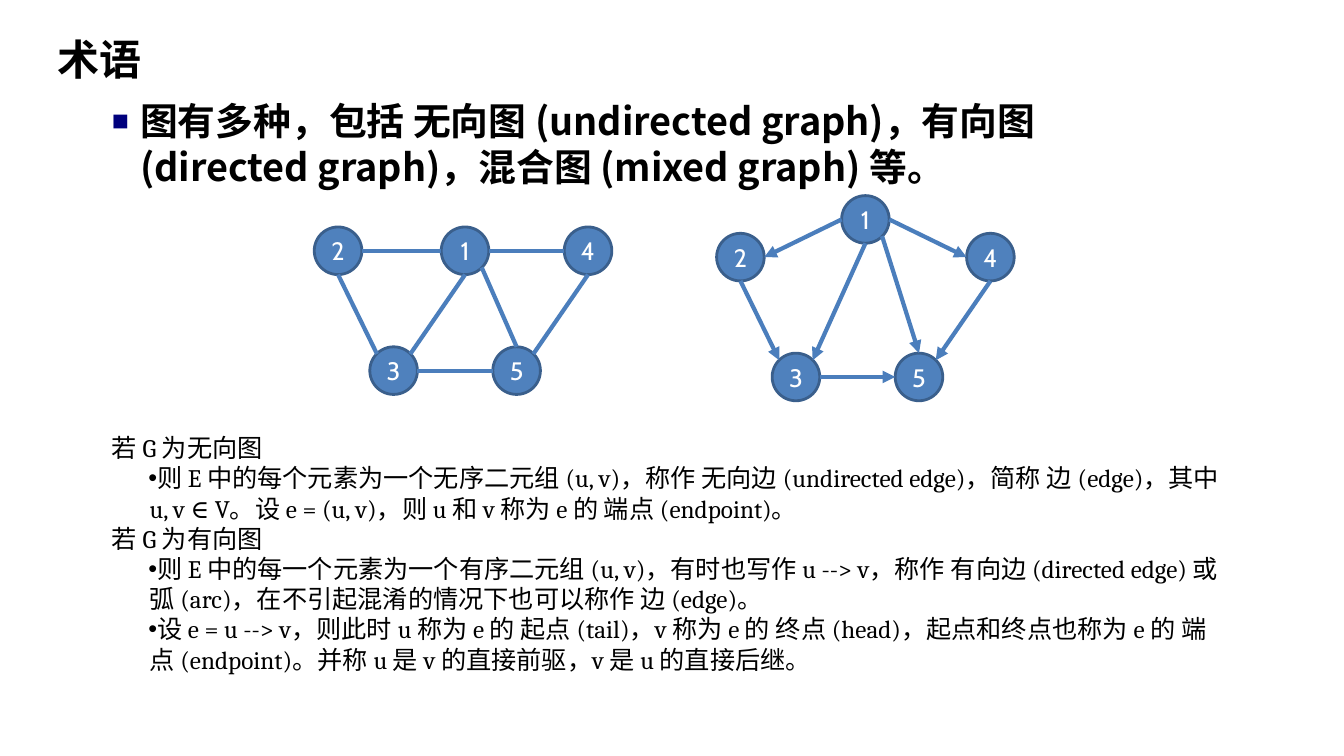
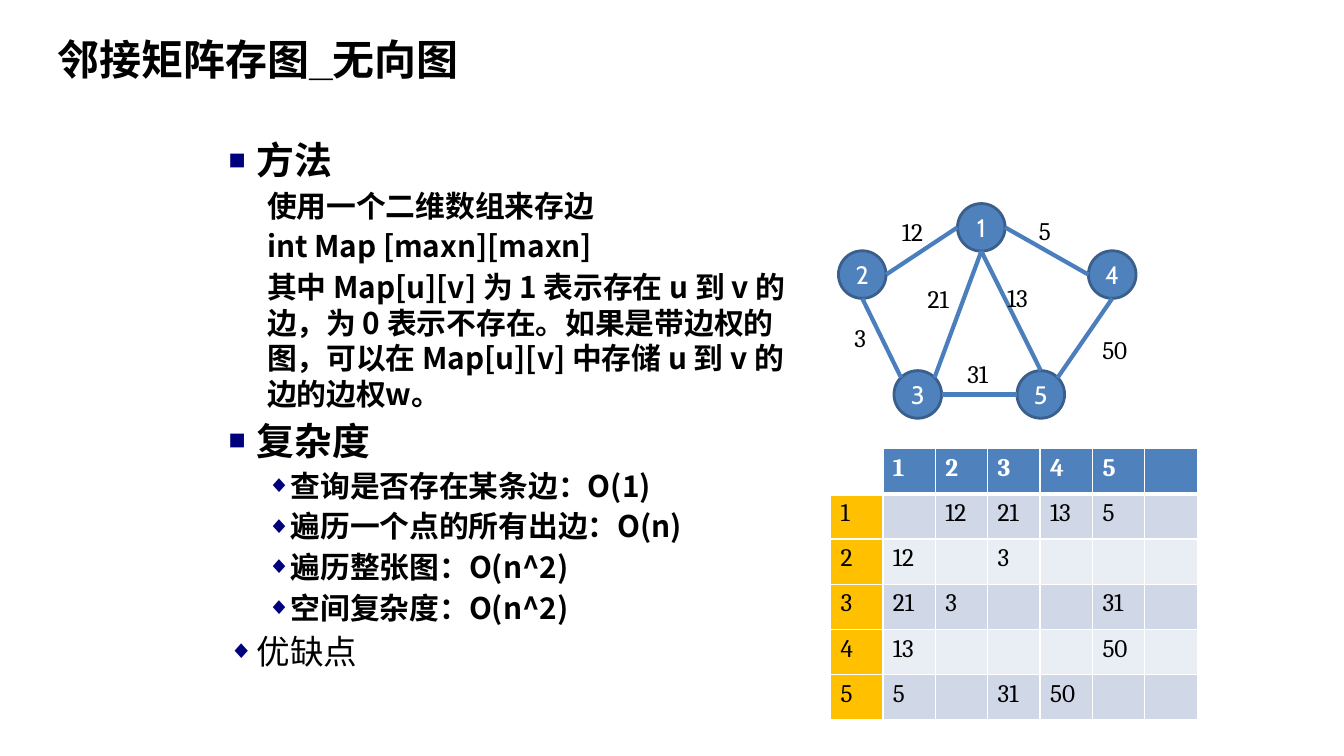
from lxml.etree import SubElement
from pptx import Presentation
from pptx.dml.color import RGBColor
from pptx.enum.shapes import MSO_CONNECTOR, MSO_SHAPE
from pptx.enum.text import MSO_ANCHOR, PP_ALIGN
from pptx.oxml.ns import qn
from pptx.util import Cm, Pt

COLORS = {
    "text": "000000", "white": "FFFFFF", "bullet": "00007D",
    "node": "4F81BD", "node_line": "3A5F8C", "edge": "4B7EBC",
    "row_head": "FFC000", "band_dark": "D0D8E8", "band_light": "E9EDF4",
}
TITLE_FONT, BODY_FONT = "Arial", "Noto Sans CJK SC"
NOTE_FONT, NODE_FONT = "Cambria", "Cabin"

TITLE_BOX = (1.2, 0.28, 31.5, 2.39)
NODE_SIZE = 1.2
# Points on a node's rim, as fractions of its size
RIM = {
    "top": (0.5, 0), "left": (0, 0.5), "bottom": (0.5, 1), "right": (1, 0.5),
    "upper_left": (0.15, 0.15), "upper_right": (0.85, 0.15),
    "lower_right": (0.85, 0.85),
}
# Body levels: left indent and first-line offset in cm
HEADING = dict(size=27, font=BODY_FONT, bold=True, left=0.71, first=-0.71,
               bullet="■", bullet_size=75, before=4)
DETAIL = dict(size=21.3, font=BODY_FONT, bold=True, left=0.97, before=3.5)
ITEM = DETAIL | dict(left=1.55, first=-0.58, bullet="◆", bullet_size=80)
PLAIN = HEADING | dict(size=24, bold=False, bullet="◆")
NOTE = dict(size=18, font=NOTE_FONT)
NOTE_ITEM = NOTE | dict(left=0.95, first=-0.03, bullet="•")


def rgb(name):
    return RGBColor.from_string(COLORS[name])


def add_bullet(properties, char, size):
    """Coloured, scaled bullet when a size is given, otherwise a plain one."""
    if size:
        color = SubElement(properties, qn("a:buClr"))
        SubElement(color, qn("a:srgbClr"), val=COLORS["bullet"])
        SubElement(properties, qn("a:buSzPct"), val=str(size * 1000))
    SubElement(properties, qn("a:buFont"), typeface="Arial")
    SubElement(properties, qn("a:buChar"), char=char)


def add_text(frame, text, *, size=18, font=NOTE_FONT, color="text", bold=False,
             align=PP_ALIGN.LEFT, left=0, first=0, bullet=None,
             bullet_size=None, before=0):
    """Append a paragraph, using the empty first one if there is one."""
    opening = frame.paragraphs[0]
    is_first = not opening.runs
    paragraph = opening if is_first else frame.add_paragraph()
    paragraph.alignment = align
    paragraph.space_before = Pt(0 if is_first else before)
    properties = paragraph._p.get_or_add_pPr()
    properties.set("marL", str(Cm(left)))
    properties.set("indent", str(Cm(first)))
    if bullet:
        add_bullet(properties, bullet, bullet_size)
    run = paragraph.add_run()
    run.text = text
    run.font.size = Pt(size)
    run.font.name = font
    run.font.bold = bold
    run.font.color.rgb = rgb(color)
    SubElement(run._r.get_or_add_rPr(), qn("a:ea"), typeface=BODY_FONT)


def add_text_box(slide, box, paragraphs, anchor=MSO_ANCHOR.TOP):
    frame = slide.shapes.add_textbox(*map(Cm, box)).text_frame
    frame.word_wrap = True
    frame.vertical_anchor = anchor
    for text, style in paragraphs:
        add_text(frame, text, **style)


def add_titled_slide(deck, title):
    slide = deck.slides.add_slide(deck.slide_layouts[6])
    style = dict(size=30, font=TITLE_FONT, bold=True)
    add_text_box(slide, TITLE_BOX, [(title, style)], MSO_ANCHOR.MIDDLE)
    return slide


def add_node(slide, x, y, label):
    node = slide.shapes.add_shape(
        MSO_SHAPE.OVAL, *map(Cm, (x, y, NODE_SIZE, NODE_SIZE)))
    node.shadow.inherit = False
    node.fill.solid()
    node.fill.fore_color.rgb = rgb("node")
    node.line.color.rgb = rgb("node_line")
    node.line.width = Pt(2)
    frame = node.text_frame
    frame.margin_left = frame.margin_right = 0
    frame.vertical_anchor = MSO_ANCHOR.MIDDLE
    add_text(frame, label, font=NODE_FONT, color="white", align=PP_ALIGN.CENTER)


def add_edge(slide, start, end, directed):
    edge = slide.shapes.add_connector(
        MSO_CONNECTOR.STRAIGHT, *map(Cm, (*start, *end)))
    edge.line.color.rgb = rgb("edge")
    edge.line.width = Pt(3)
    if directed:
        SubElement(edge.line._get_or_add_ln(), qn("a:tailEnd"), type="triangle")
    SubElement(edge._element.spPr, qn("a:effectLst"))


def add_graph(slide, left, top, apex, drop, directed=False,
              exit_to_5="lower_right", weights=()):
    """Five-node graph: node 1 at apex, the other rows drop below it."""
    offsets = {2: (0, drop), 1: (apex, 0), 4: (6.3, drop),
               3: (1.4, drop + 3.02), 5: (4.5, drop + 3.02)}
    nodes = {key: (left + x, top + y) for key, (x, y) in offsets.items()}
    edges = [
        (2, "bottom", 3, "upper_left"), (1, "left", 2, "right"),
        (1, "right", 4, "left"), (1, "bottom", 3, "upper_right"),
        (1, exit_to_5, 5, "top"), (4, "bottom", 5, "upper_right"),
        (3, "right", 5, "left"),
    ]

    def rim_point(key, side):
        return [at + NODE_SIZE * part for at, part in zip(nodes[key], RIM[side])]

    for key, (x, y) in nodes.items():
        add_node(slide, x, y, str(key))
    for source, leaving, target, entering in edges:
        add_edge(slide, rim_point(source, leaving),
                 rim_point(target, entering), directed)
    for weight, x, y in weights:
        add_text_box(slide, (left + x, top + y, 1.35, 1.02), [(weight, NOTE)])


def add_cell_borders(cell, bottom):
    properties = cell._tc.get_or_add_tcPr()
    for side, width in (("L", 1), ("R", 1), ("T", 1), ("B", bottom)):
        line = SubElement(properties, qn(f"a:ln{side}"), w=str(Pt(width)))
        fill = SubElement(line, qn("a:solidFill"))
        SubElement(fill, qn("a:srgbClr"), val=COLORS["white"])


def add_matrix(slide, left, top, rows, cell_width=1.32, cell_height=1.14):
    columns = len(rows[0])
    table = slide.shapes.add_table(
        len(rows), columns, Cm(left), Cm(top),
        Cm(cell_width * columns), Cm(cell_height * len(rows))).table
    table.first_row = table.horz_banding = False
    for row, values in enumerate(rows):
        for column, value in enumerate(values):
            cell = table.cell(row, column)
            is_head = row == 0
            add_cell_borders(cell, bottom=3 if is_head else 1)
            if is_head and column == 0:
                cell.fill.background()
                continue
            fill = ("node" if is_head else "row_head" if column == 0
                    else "band_dark" if row % 2 else "band_light")
            cell.fill.solid()
            cell.fill.fore_color.rgb = rgb(fill)
            if value:
                add_text(cell.text_frame, value, bold=is_head,
                         color="white" if is_head else "text")


def build_terms(deck):
    slide = add_titled_slide(deck, "术语")
    add_text_box(slide, (2.57, 2.34, 25.78, 4.8), [
        ("图有多种，包括 无向图 (undirected graph)，有向图 (directed graph)，"
         "混合图 (mixed graph) 等。", HEADING),
    ])
    add_text_box(slide, (2.57, 10.77, 28.63, 7.9), [
        ("若 G 为无向图", NOTE),
        ("则 E 中的每个元素为一个无序二元组 (u, v)，称作 无向边 (undirected edge)，"
         "简称 边 (edge)，其中 u, v ∈ V。设 e = (u, v)，则 u 和 v 称为 e 的 "
         "端点 (endpoint)。", NOTE_ITEM),
        ("若 G 为有向图", NOTE),
        ("则 E 中的每一个元素为一个有序二元组 (u, v)，有时也写作 u --> v，称作 "
         "有向边 (directed edge) 或 弧 (arc)，在不引起混淆的情况下也可以称作 "
         "边 (edge)。", NOTE_ITEM),
        ("设 e = u --> v，则此时 u 称为 e 的 起点 (tail)，v 称为 e 的 终点 (head)，"
         "起点和终点也称为 e 的 端点 (endpoint)。并称 u 是 v 的直接前驱，"
         "v 是 u 的直接后继。", NOTE_ITEM),
    ])
    add_graph(slide, 7.92, 5.72, apex=3.2, drop=0)
    add_graph(slide, 18.06, 4.93, apex=3.15, drop=0.95, directed=True)


def build_adjacency_matrix(deck):
    slide = add_titled_slide(deck, "邻接矩阵存图_无向图")
    add_text_box(slide, (5.51, 3.33, 14.83, 13.4), [
        ("方法", HEADING),
        ("使用一个二维数组来存边", DETAIL),
        ("int Map [maxn][maxn]", DETAIL),
        ("其中 Map[u][v] 为 1 表示存在 u 到 v 的边，为 0 表示不存在。"
         "如果是带边权的图，可以在 Map[u][v] 中存储 u 到 v 的边的边权w。", DETAIL),
        ("复杂度", HEADING),
        ("查询是否存在某条边：O(1)", ITEM),
        ("遍历一个点的所有出边：O(n)", ITEM),
        ("遍历整张图：O(n^2)", ITEM),
        ("空间复杂度：O(n^2)", ITEM),
        ("优缺点", PLAIN),
    ])
    add_graph(slide, 21.13, 5.13, apex=3, drop=1.19, exit_to_5="bottom", weights=[
        ("12", 1.35, 0.2), ("5", 4.8, 0.18), ("3", 0.15, 2.87),
        ("21", 2, 1.88), ("13", 4, 1.85), ("31", 3, 3.78), ("50", 6.4, 3.18),
    ])
    add_matrix(slide, 20.93, 11.3, [
        ["", "1", "2", "3", "4", "5", ""],
        ["1", "", "12", "21", "13", "5", ""],
        ["2", "12", "", "3", "", "", ""],
        ["3", "21", "3", "", "", "31", ""],
        ["4", "13", "", "", "", "50", ""],
        ["5", "5", "", "31", "50", "", ""],
    ])


def main():
    deck = Presentation()
    deck.slide_width, deck.slide_height = Cm(33.87), Cm(19.05)
    build_terms(deck)
    build_adjacency_matrix(deck)
    deck.save("out.pptx")


if __name__ == "__main__":
    main()
